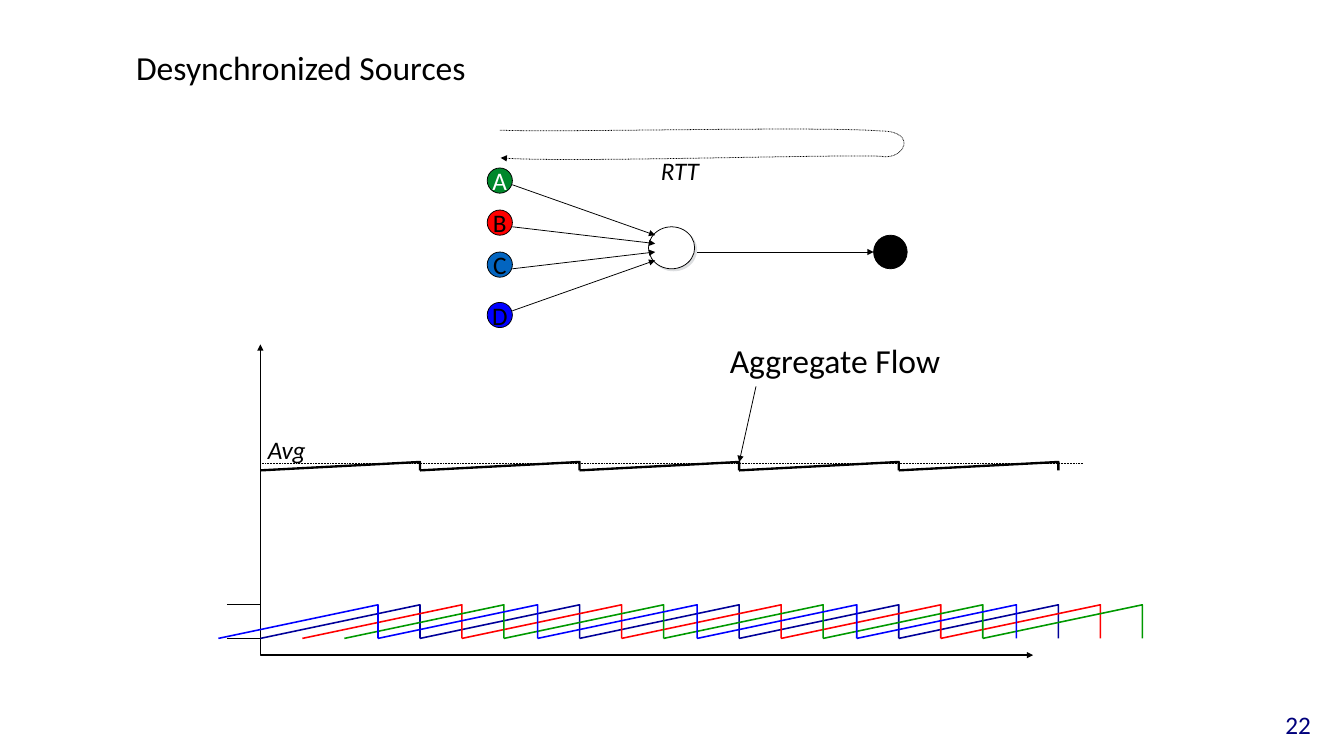
"""Draw the slide on desynchronized sources and their aggregate flow."""
import pptx
import pptx.util
import pptx.dml.color
import pptx.enum.dml
import pptx.enum.shapes
import pptx.enum.text
import pptx.oxml
import pptx.oxml.ns

RGB = pptx.dml.color.RGBColor
ALIGN = pptx.enum.text.PP_ALIGN
MIDDLE = pptx.enum.text.MSO_ANCHOR.MIDDLE
qn = pptx.oxml.ns.qn
PX = 10160

BLACK = RGB(0, 0, 0)
WHITE = RGB(255, 255, 255)
RED = RGB(255, 0, 0)
BLUE = RGB(0, 0, 255)
NAVY = RGB(0, 0, 0x99)
LEAF = RGB(0, 0x99, 0)
GREEN = RGB(0, 0x88, 0x2B)
AZURE = RGB(0x03, 0x65, 0xC0)
INK = RGB(0, 0, 0x7C)

TITLE = "Desynchronized Sources"
NODES = [("A", 200, GREEN, WHITE), ("B", 250, RED, BLACK),
         ("C", 300, AZURE, BLACK), ("D", 360, BLUE, BLACK)]
FLOWS = [(310, NAVY), (360, RED), (410, LEAF), (260, BLUE)]
TEETH, PERIOD = 5, 190
AXES = [(310, 410), (310, 780), (1230, 780)]
LOOP = [(595, 155), (668, 158), (973, 150), (1049, 156),
        (1093, 156), (1077, 192), (1048, 186),
        (973, 184), (669, 194), (596, 188)]

deck = pptx.Presentation()
deck.slide_width, deck.slide_height = 1600 * PX, 900 * PX
slide = deck.slides.add_slide(deck.slide_layouts[5])
shapes = slide.shapes


def add_end(line, *ends):
    for end in ends:
        line._get_or_add_ln().append(pptx.oxml.parse_xml(
            f'<a:{end} {pptx.oxml.ns.nsdecls("a")} type="triangle"/>'))


def set_line(line, width=0.75, color=BLACK, dots=False):
    line.width = pptx.util.Pt(width)
    line.color.rgb = color
    if dots:
        line.dash_style = pptx.enum.dml.MSO_LINE.ROUND_DOT


def add_run(frame, text, size, color=BLACK, italic=False, align=ALIGN.LEFT):
    para = frame.paragraphs[0]
    para.alignment = align
    run = para.add_run()
    run.text = text
    run.font.name = "Calibri"
    run.font.size = pptx.util.Pt(size)
    run.font.color.rgb = color
    run.font.italic = italic


def set_inset(frame, inset):
    frame.margin_left = frame.margin_right = inset * PX
    frame.margin_top = frame.margin_bottom = inset * PX


def add_label(host, box, text, size, **look):
    frame = host.add_textbox(*(n * PX for n in box)).text_frame
    frame.word_wrap = False
    add_run(frame, text, size, **look)
    return frame


def add_line(start, end, arrow=True, dots=False):
    line = shapes.add_connector(pptx.enum.shapes.MSO_CONNECTOR.STRAIGHT,
                                *(n * PX for n in start + end))
    set_line(line.line, dots=dots)
    if arrow:
        add_end(line.line, "tailEnd")
    line._element.spPr.append(pptx.oxml.parse_xml(
        f'<a:effectLst {pptx.oxml.ns.nsdecls("a")}/>'))


def add_trace(host, points, **look):
    pen = host.build_freeform(*points[0], scale=PX)
    pen.add_line_segments(points[1:], close=False)
    trace = pen.convert_to_shape()
    trace.fill.background()
    trace.shadow.inherit = False
    set_line(trace.line, **look)
    return trace


def add_saw(host, left, low, high, **look):
    for x in range(left, left + TEETH * PERIOD, PERIOD):
        peak = x + PERIOD
        add_trace(host, [(x, low), (peak, high), (peak, low)], **look)


def add_disc(left, top, width, height, color):
    disc = shapes.add_shape(pptx.enum.shapes.MSO_SHAPE.OVAL,
                            *(n * PX for n in (left, top, width, height)))
    disc.fill.solid()
    disc.fill.fore_color.rgb = color
    disc.shadow.inherit = False
    set_line(disc.line)
    return disc


def bend(trace):
    steps = list(trace._element.iter(qn("a:lnTo")))
    for i in range(0, len(steps), 3):
        curve = pptx.oxml.parse_xml(
            f'<a:cubicBezTo {pptx.oxml.ns.nsdecls("a")}/>')
        steps[i].addprevious(curve)
        for step in steps[i:i + 3]:
            curve.append(step[0])
            step.getparent().remove(step)


def main():
    number = add_label(shapes, (1525, 845, 41, 45), "22", 24,
                       color=INK, align=ALIGN.CENTER)
    set_inset(number, 0)

    title = shapes.title
    title.left, title.top = 157 * PX, 0
    title.width, title.height = 1288 * PX, 160 * PX
    title.text_frame.vertical_anchor = MIDDLE
    set_inset(title.text_frame, 5)
    add_run(title.text_frame, TITLE, 32)

    axes = add_trace(shapes, AXES, width=1.5)
    add_end(axes.line, "headEnd", "tailEnd")
    add_line((900, 460), (880, 550))
    add_label(shapes, (860, 400, 271, 58), "Aggregate Flow", 32)
    add_saw(shapes.add_group_shape().shapes, 310, 560, 550, width=2.25)
    for y in (760, 720):
        add_line((270, y), (310, y), arrow=False)
    flows = shapes.add_group_shape().shapes
    for left, color in FLOWS:
        add_saw(flows, left, 760, 720, width=1.5, color=color)
    add_line((310, 552), (1290, 552), arrow=False, dots=True)
    add_label(shapes, (310, 513, 64, 45), "Avg", 24, italic=True)

    for name, top, fill, ink in NODES:
        frame = add_disc(580, top, 30, 30, fill).text_frame
        frame.word_wrap = False
        frame.vertical_anchor = MIDDLE
        add_run(frame, name, 24, color=ink, align=ALIGN.CENTER)
    router = add_disc(772, 270, 55, 50, WHITE)
    router._element.spPr.find(qn("a:effectLst")).append(pptx.oxml.parse_xml(
        f'<a:outerShdw {pptx.oxml.ns.nsdecls("a")} blurRad="0" dist="35560" '
        'dir="2700000"><a:srgbClr val="DCDEE0"/></a:outerShdw>'))
    for i in range(len(NODES)):
        add_line((610, 220 + 50 * i), (780, 280 + 10 * i))
    add_line((830, 300), (1040, 300))
    add_disc(1040, 280, 40, 40, BLACK)

    trip = shapes.add_group_shape().shapes
    loop = add_trace(trip, LOOP, dots=True)
    bend(loop)
    add_end(loop.line, "tailEnd")
    add_label(trip, (778, 181, 64, 45), "RTT", 24, italic=True)
    deck.save("out.pptx")


if __name__ == "__main__":
    main()
